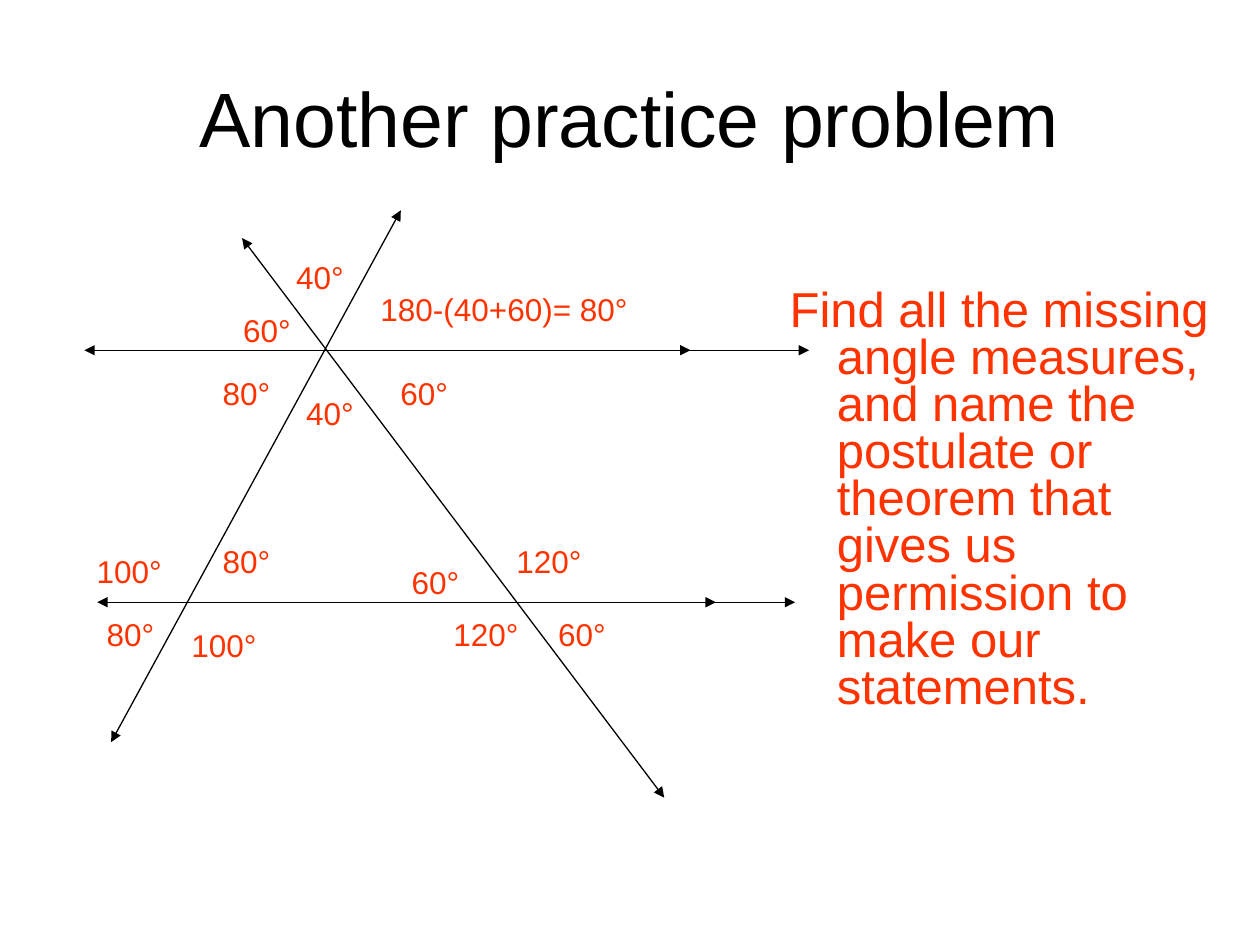
from dataclasses import dataclass

from lxml import etree
from pptx import Presentation
from pptx.dml.color import RGBColor
from pptx.enum.shapes import MSO_CONNECTOR
from pptx.enum.text import MSO_ANCHOR, MSO_AUTO_SIZE, PP_ALIGN
from pptx.oxml.ns import qn
from pptx.shapes.group import GroupShape
from pptx.slide import Slide
from pptx.text.text import TextFrame
from pptx.util import Cm, Pt

STRAIGHT = MSO_CONNECTOR.STRAIGHT
MIDDLE, TOP = MSO_ANCHOR.MIDDLE, MSO_ANCHOR.TOP
CENTER, LEFT = PP_ALIGN.CENTER, PP_ALIGN.LEFT
GROW = MSO_AUTO_SIZE.SHAPE_TO_FIT_TEXT
NO_FIT = MSO_AUTO_SIZE.NONE

BLACK = "000000"
ORANGE = "FF3300"
LABEL_HEIGHT = 1.02
UPPER_PARALLEL, LOWER_PARALLEL = 7.06, 12.14


@dataclass(frozen=True)
class Ray:
    """A line in centimetres; both ends carry arrows unless it is a parallel mark."""
    start: tuple[float, float]
    end: tuple[float, float]
    ends: tuple[str, ...] = ("headEnd", "tailEnd")


@dataclass(frozen=True)
class AngleLabel:
    text: str
    left: float
    top: float
    width: float = 2.34


RAYS = [
    Ray((1.7, UPPER_PARALLEL), (16.31, UPPER_PARALLEL)),
    Ray((1.96, LOWER_PARALLEL), (16.03, LOWER_PARALLEL)),
    Ray((4.88, 4.8), (13.39, 16.08)),
    Ray((8.08, 4.24), (2.24, 14.96)),
    Ray((12.85, UPPER_PARALLEL), (13.92, UPPER_PARALLEL), ("tailEnd",)),
    Ray((13.39, LOWER_PARALLEL), (14.43, LOWER_PARALLEL), ("tailEnd",)),
]

ANGLE_LABELS = [
    AngleLabel("40°", 5.72, 5.08, 1.7),
    AngleLabel("120°", 8.89, 12.27),
    AngleLabel("120°", 10.16, 10.8, 1.9),
    AngleLabel("60°", 8.05, 11.23),
    AngleLabel("60°", 11, 12.27),
    AngleLabel("40°", 5.92, 7.82, 1.7),
    AngleLabel("60°", 7.82, 7.42),
    AngleLabel("60°", 4.65, 6.15),
    AngleLabel("180-(40+60)= 80°", 7.42, 5.72, 7.82),
    AngleLabel("80°", 4.24, 7.42),
    AngleLabel("80°", 4.24, 10.8),
    AngleLabel("80°", 1.9, 12.27),
    AngleLabel("100°", 1.7, 11),
    AngleLabel("100°", 3.61, 12.5),
]


def rgb(hex_color: str) -> RGBColor:
    return RGBColor.from_string(hex_color)


def write(frame: TextFrame, text: str, size: int, color: str,
          frame_format: dict, paragraph_format: dict) -> None:
    frame.text = text
    paragraph = frame.paragraphs[0]
    font = paragraph.runs[0].font
    font.color.rgb = rgb(color)
    formats = (
        (frame, {"word_wrap": True, **frame_format}),
        (paragraph, paragraph_format),
        (font, {"name": "Arial", "size": Pt(size)}),
    )
    for target, values in formats:
        for attribute, value in values.items():
            setattr(target, attribute, value)


def add_title(slide: Slide) -> None:
    title = slide.shapes.title
    position = {"left": 1.27, "top": 0.76, "width": 22.86, "height": 3.18}
    for side, length in position.items():
        setattr(title, side, Cm(length))
    write(title.text_frame, "Another practice problem", 44, BLACK,
          {"vertical_anchor": MIDDLE, "auto_size": NO_FIT}, {"alignment": CENTER})


def add_task(slide: Slide) -> None:
    task = slide.shapes.add_textbox(Cm(15.67), Cm(5.72), Cm(9.09), Cm(9.53))
    write(task.text_frame,
          "Find all the missing angle measures, and name the postulate or "
          "theorem that gives us permission to make our statements.",
          28, ORANGE, {"vertical_anchor": TOP, "auto_size": NO_FIT},
          {"alignment": LEFT, "line_spacing": 0.8})
    properties = task.text_frame.paragraphs[0]._p.get_or_add_pPr()
    hanging = Cm(0.95)
    properties.set("marL", str(hanging))
    properties.set("indent", str(-hanging))


def add_ray(diagram: GroupShape, ray: Ray) -> None:
    connector = diagram.shapes.add_connector(
        STRAIGHT, *(Cm(value) for value in ray.start + ray.end))
    connector.line.color.rgb = rgb(BLACK)
    connector.line.width = Pt(0.75)
    outline = connector.line._get_or_add_ln()
    for end in ray.ends:
        etree.SubElement(outline, qn(f"a:{end}"), type="triangle")
    etree.SubElement(connector._element.spPr, qn("a:effectLst"))


def add_angle_label(slide: Slide, label: AngleLabel) -> None:
    box = slide.shapes.add_textbox(
        Cm(label.left), Cm(label.top), Cm(label.width), Cm(LABEL_HEIGHT))
    write(box.text_frame, label.text, 18, ORANGE,
          {"auto_size": GROW}, {"alignment": LEFT})


def main() -> None:
    presentation = Presentation()
    presentation.slide_width = Cm(25.4)
    presentation.slide_height = Cm(19.05)
    slide = presentation.slides.add_slide(presentation.slide_layouts[5])

    add_title(slide)
    add_task(slide)
    diagram = slide.shapes.add_group_shape()
    for ray in RAYS:
        add_ray(diagram, ray)
    for label in ANGLE_LABELS:
        add_angle_label(slide, label)

    presentation.save("out.pptx")


if __name__ == "__main__":
    main()
